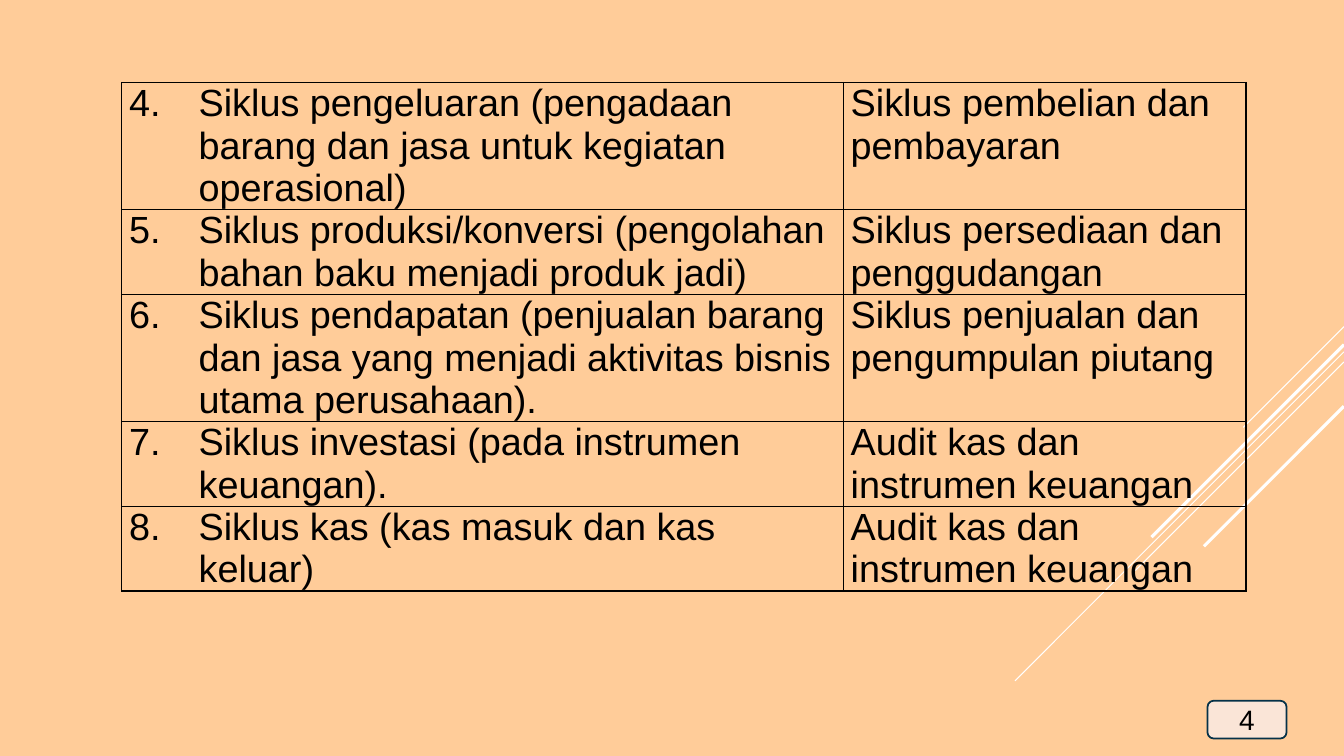
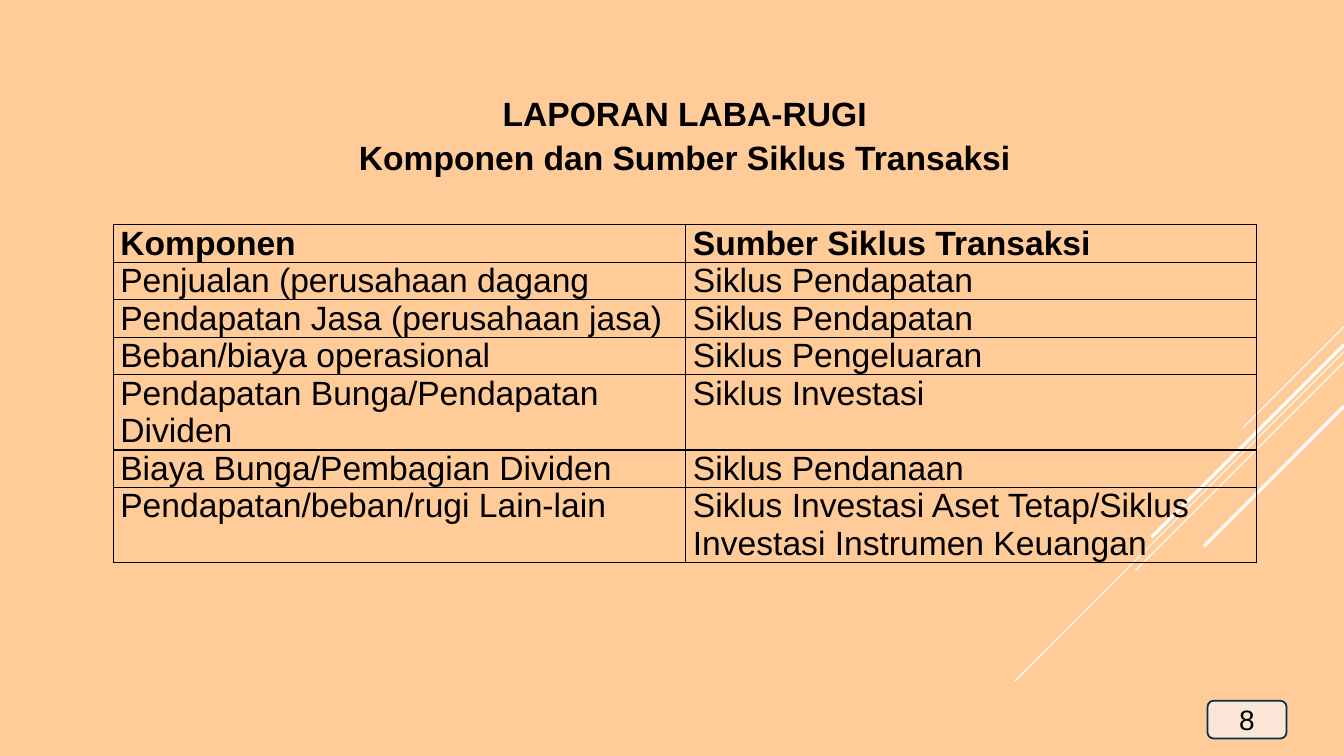
"""Build two slides of tables that map audit cycles and income statement items."""
from lxml import etree
from pptx import Presentation
from pptx.dml.color import RGBColor
from pptx.enum.shapes import MSO_CONNECTOR, MSO_SHAPE
from pptx.enum.text import MSO_ANCHOR, MSO_AUTO_SIZE, PP_ALIGN
from pptx.oxml.ns import qn
from pptx.util import Pt

STRAIGHT = MSO_CONNECTOR.STRAIGHT
ROUNDED = MSO_SHAPE.ROUNDED_RECTANGLE
TOP, MIDDLE = MSO_ANCHOR.TOP, MSO_ANCHOR.MIDDLE
NO_AUTOFIT = MSO_AUTO_SIZE.NONE
CENTER = PP_ALIGN.CENTER

PEACH = RGBColor(0xFF, 0xCC, 0x99)
PALE = RGBColor(0xFA, 0xE5, 0xD7)
NAVY = RGBColor(0x04, 0x31, 0x48)
WHITE = RGBColor(0xFF, 0xFF, 0xFF)
BLACK = RGBColor(0, 0, 0)

FONT = "Arial"
SLIDE_WIDTH, SLIDE_HEIGHT = 960, 540
LINE_RATIO = 1.117
CELL_MARGIN = 5.2
NUMBER_INDENT = 49.7
TITLE_ONLY, BLANK = 5, 6

# Each stripe: height at the right edge, horizontal run, line width
STRIPES = [
    (233.3, 72, 0.75),
    (251.3, 235, 0.75),
    (258.5, 149, 0.75),
    (246.2, 137.5, 2.25),
    (290.2, 100, 2.25),
]

TITLE = ["LAPORAN LABA-RUGI", "Komponen dan Sumber Siklus Transaksi"]

CYCLES = {
    "left": 87, "top": 59, "columns": (515.5, 287.5), "size": 27,
    "first_number": 4, "header": False,
    "rows": [
        (3, "Siklus pengeluaran (pengadaan barang dan jasa untuk kegiatan operasional)",
         "Siklus pembelian dan pembayaran"),
        (2, "Siklus produksi/konversi (pengolahan bahan baku menjadi produk jadi)",
         "Siklus persediaan dan penggudangan"),
        (3, "Siklus pendapatan (penjualan barang dan jasa yang menjadi aktivitas bisnis "
            "utama perusahaan).",
         "Siklus penjualan dan pengumpulan piutang"),
        (2, "Siklus investasi (pada instrumen keuangan).",
         "Audit kas dan instrumen keuangan"),
        (2, "Siklus kas (kas masuk dan kas keluar)",
         "Audit kas dan instrumen keuangan"),
    ],
}

INCOME = {
    "left": 80.8, "top": 160.6, "columns": (409, 407.5), "size": 24,
    "first_number": None, "header": True,
    "rows": [
        (1, "Komponen", "Sumber Siklus Transaksi"),
        (1, "Penjualan (perusahaan dagang", "Siklus Pendapatan"),
        (1, "Pendapatan Jasa (perusahaan jasa)", "Siklus Pendapatan"),
        (1, "Beban/biaya operasional", "Siklus Pengeluaran"),
        (2, "Pendapatan Bunga/Pendapatan Dividen", "Siklus Investasi"),
        (1, "Biaya Bunga/Pembagian Dividen", "Siklus Pendanaan"),
        (2, "Pendapatan/beban/rugi Lain-lain",
         "Siklus Investasi Aset Tetap/Siklus Investasi Instrumen Keuangan"),
    ],
}


def style_font(paragraph, size, bold=False):
    font = paragraph.font
    font.name, font.size, font.bold = FONT, Pt(size), bold
    font.color.rgb = BLACK


def add_stripe(slide, right_y, run, width):
    stripe = slide.shapes.add_connector(
        STRAIGHT, Pt(SLIDE_WIDTH), Pt(right_y), Pt(SLIDE_WIDTH - run), Pt(right_y + run))
    stripe.line.color.rgb = WHITE
    stripe.line.width = Pt(width)
    etree.SubElement(stripe._element.spPr, qn("a:effectLst"))


def add_page_badge(slide, number):
    badge = slide.shapes.add_shape(ROUNDED, Pt(862.5), Pt(500.5), Pt(56.5), Pt(27))
    badge.shadow.inherit = False
    badge.fill.solid()
    badge.fill.fore_color.rgb = PALE
    badge.line.color.rgb = NAVY
    badge.line.width = Pt(1.25)
    frame = badge.text_frame
    frame.margin_top = frame.margin_bottom = 0
    frame.vertical_anchor = MIDDLE
    frame.text = str(number)
    frame.paragraphs[0].alignment = CENTER
    style_font(frame.paragraphs[0], 20)


def add_page(prs, layout, number):
    slide = prs.slides.add_slide(prs.slide_layouts[layout])
    for stripe in STRIPES:
        add_stripe(slide, *stripe)
    add_page_badge(slide, number)
    return slide


def number_paragraph(paragraph, number):
    properties = paragraph._p.get_or_add_pPr()
    properties.set("marL", str(Pt(NUMBER_INDENT)))
    properties.set("indent", str(-Pt(NUMBER_INDENT)))
    etree.SubElement(properties, qn("a:buFont"), typeface=FONT)
    etree.SubElement(properties, qn("a:buAutoNum"), type="arabicPeriod", startAt=str(number))


def add_borders(cell):
    properties = cell._tc.get_or_add_tcPr()
    for position, side in enumerate(("lnL", "lnR", "lnT", "lnB")):
        border = etree.Element(qn(f"a:{side}"), w=str(Pt(1)))
        fill = etree.SubElement(border, qn("a:solidFill"))
        etree.SubElement(fill, qn("a:srgbClr"), val=str(BLACK))
        properties.insert(position, border)


def fill_cell(cell, text, size, bold):
    cell.margin_left = cell.margin_right = Pt(CELL_MARGIN)
    cell.margin_top = cell.margin_bottom = 0
    cell.vertical_anchor = TOP
    cell.fill.background()
    cell.text = text
    style_font(cell.text_frame.paragraphs[0], size, bold)
    add_borders(cell)


def add_grid(slide, content):
    rows, columns, size = content["rows"], content["columns"], content["size"]
    heights = [lines * size * LINE_RATIO for lines, *_ in rows]
    table = slide.shapes.add_table(
        len(rows), len(columns), Pt(content["left"]), Pt(content["top"]),
        Pt(sum(columns)), Pt(sum(heights))).table
    table.first_row = content["header"]
    table.horz_banding = False
    for column, width in zip(table.columns, columns):
        column.width = Pt(width)
    for index, (_, *texts) in enumerate(rows):
        table.rows[index].height = Pt(heights[index])
        for column, text in enumerate(texts):
            fill_cell(table.cell(index, column), text, size, content["header"] and index == 0)
        if content["first_number"]:
            paragraph = table.cell(index, 0).text_frame.paragraphs[0]
            number_paragraph(paragraph, content["first_number"] + index)


def set_title(slide, lines):
    title = slide.shapes.title
    title.left, title.top, title.width, title.height = Pt(188.6), Pt(62.6), Pt(601), Pt(65.5)
    frame = title.text_frame
    frame.word_wrap = True
    frame.auto_size = NO_AUTOFIT
    frame.vertical_anchor = TOP
    frame.text = "\n".join(lines)
    for paragraph in frame.paragraphs:
        paragraph.alignment = CENTER
        paragraph.space_before = Pt(2.5)
        style_font(paragraph, 24, True)


def main():
    prs = Presentation()
    prs.slide_width, prs.slide_height = Pt(SLIDE_WIDTH), Pt(SLIDE_HEIGHT)
    background = prs.slide_master.background.fill
    background.solid()
    background.fore_color.rgb = PEACH

    add_grid(add_page(prs, BLANK, 4), CYCLES)

    income_slide = add_page(prs, TITLE_ONLY, 8)
    set_title(income_slide, TITLE)
    add_grid(income_slide, INCOME)

    prs.save("out.pptx")


if __name__ == "__main__":
    main()
